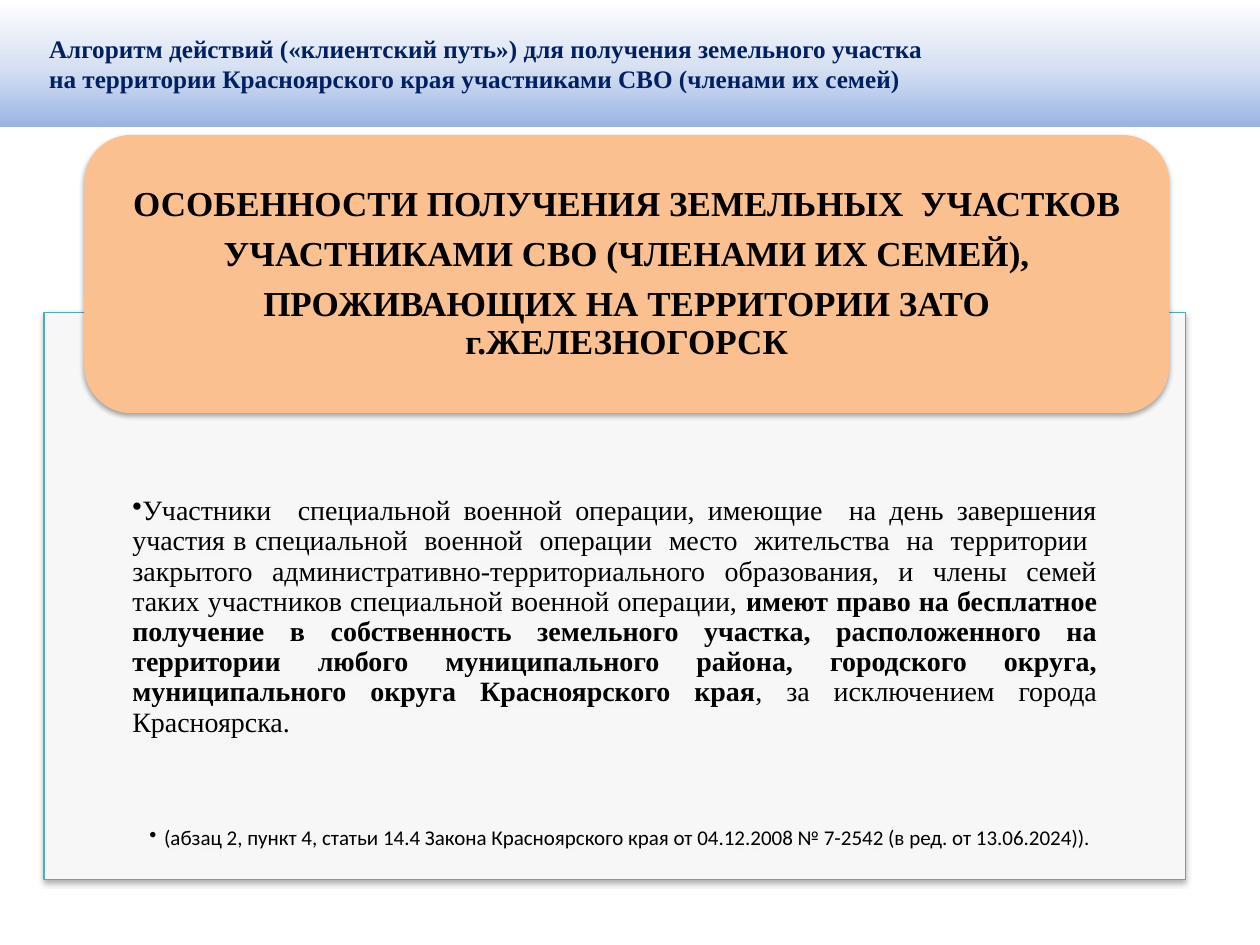
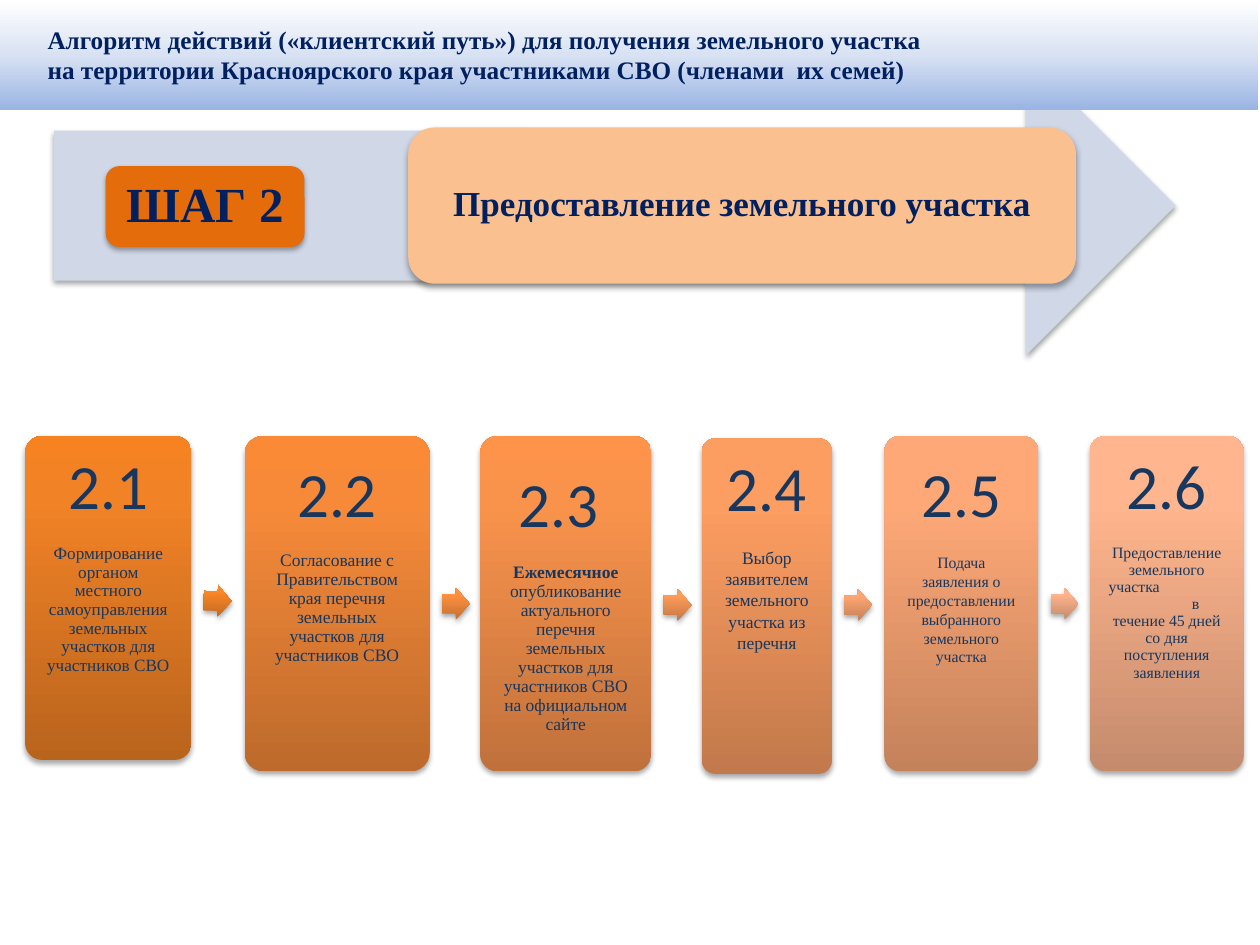
import copy
import dataclasses
import math

import pptx
import pptx.dml.color
import pptx.enum.shapes
import pptx.enum.text
import pptx.oxml.ns
import pptx.util
from lxml import etree

Cm = pptx.util.Cm
Pt = pptx.util.Pt
Shapes = pptx.enum.shapes.MSO_SHAPE
Align = pptx.enum.text.PP_ALIGN
Anchor = pptx.enum.text.MSO_ANCHOR
qn = pptx.oxml.ns.qn


@dataclasses.dataclass(frozen=True)
class Theme:
    serif: str = "Times New Roman"
    sans: str = "Calibri"
    navy: str = "002060"
    number_blue: str = "17375E"
    black: str = "000000"
    white: str = "FFFFFF"
    peach: str = "FAC090"
    orange: str = "E46C0A"
    pale_blue: str = "D0D8E8"
    teal: str = "4BACC6"
    title_size: float = 14.4
    heading_size: float = 20
    step_size: float = 28
    number_size: float = 36
    body_size: float = 16
    source_size: float = 12
    tight: float = 0.9
    gap_ratio: float = 0.35
    band: tuple = ((0, "9AB5E4"), (0.5, "D9E2F3"), (1, "FFFFFF"))
    cards: tuple = (
        ("B9641D", "F18226", "F68222"),
        ("BD6A2C", "F68A39", "FA8A35"),
        ("C0713B", "F9934C", "FE9349"),
        ("C2794B", "FC9D61", "FF9E60"),
        ("C4825B", "FEA877", "FFA977"),
        ("C48B6D", "FFB58D", "FFB68F"),
    )
    arrows: tuple = (
        ("C3691F", "FD8828", "FF8928"),
        ("C47032", "FF9140", "FF9241"),
        ("C57845", "FF9C59", "FF9C5B"),
        ("C58158", "FFA773", "FFA875"),
        ("C48B6C", "FFB48D", "FFB58E"),
    )


THEME = Theme()


def color(value):
    return pptx.dml.color.RGBColor.from_string(value)


def set_all(target, values):
    for name, value in values.items():
        setattr(target, name, value)


def glossy(colors):
    return tuple(zip((0, 0.8, 1), colors))


def line(*runs, **layout):
    """Describe a paragraph: runs are (text, font values); layout holds its format."""
    return runs, layout


def font(size, hue, name=THEME.serif, bold=False):
    return {"size": size, "hue": hue, "name": name, "bold": bold}


def centered(text, style, spacing=THEME.tight, after=None):
    if after is None:
        after = THEME.gap_ratio * style["size"]
    return line((text, style), alignment=Align.CENTER,
                line_spacing=spacing, space_after=Pt(after))


class Deck:
    """Hold the presentation, its theme and the slide being built."""

    def __init__(self, theme):
        self.theme = theme
        self.presentation = pptx.Presentation()
        set_all(self.presentation, {"slide_width": Cm(25.4), "slide_height": Cm(19.05)})
        self.slide = None

    def new_slide(self):
        self.slide = self.presentation.slides.add_slide(self.presentation.slide_layouts[6])

    def shape(self, kind, box, fill, shadow=True, adjustments=()):
        """Add a preset shape; fill is one colour or a series of gradient stops."""
        shape = self.slide.shapes.add_shape(kind, *(Cm(length) for length in box))
        for index, value in enumerate(adjustments):
            shape.adjustments[index] = value
        if isinstance(fill, str):
            shape.fill.solid()
            shape.fill.fore_color.rgb = color(fill)
        else:
            self.gradient(shape, fill)
        shape.line.fill.background()
        shape.shadow.inherit = False
        if shadow:
            self.drop_shadow(shape)
        return shape

    def gradient(self, shape, stops):
        """Fill from the bottom edge up with three stops."""
        shape.fill.gradient()
        shape.fill.gradient_angle = 90
        stop_list = shape.element.find(".//" + qn("a:gsLst"))
        stop_list.insert(1, copy.deepcopy(stop_list[0]))
        for stop, (position, hue) in zip(shape.fill.gradient_stops, stops):
            stop.color.rgb = color(hue)
            stop.position = position

    def drop_shadow(self, shape):
        effects = shape.element.spPr.find(qn("a:effectLst"))
        shadow = etree.SubElement(
            effects, qn("a:outerShdw"), blurRad=str(Pt(3.1)), dist=str(Pt(1.8)),
            dir="5400000", rotWithShape="0")
        hue = etree.SubElement(shadow, qn("a:srgbClr"), val=self.theme.black)
        etree.SubElement(hue, qn("a:alpha"), val="35000")

    def fill_text(self, shape, paragraphs, insets, anchor=Anchor.MIDDLE):
        frame = shape.text_frame
        sides = ("margin_left", "margin_top", "margin_right", "margin_bottom")
        set_all(frame, dict(zip(sides, map(Cm, insets))))
        set_all(frame, {"word_wrap": True, "vertical_anchor": anchor})
        for index, (runs, layout) in enumerate(paragraphs):
            paragraph = frame.add_paragraph() if index else frame.paragraphs[0]
            self.fill_paragraph(paragraph, runs, dict(layout))

    def fill_paragraph(self, paragraph, runs, layout):
        margin, indent = layout.pop("margin", 0), layout.pop("indent", 0)
        bullet = layout.pop("bullet", None)
        set_all(paragraph, {"alignment": Align.LEFT, **layout})
        properties = paragraph._p.get_or_add_pPr()
        properties.set("marL", str(Cm(margin)))
        properties.set("indent", str(Cm(indent)))
        if bullet:
            etree.SubElement(properties, qn("a:buChar"), char=bullet)
        for text, style in runs:
            for index, part in enumerate(text.split("\n")):
                if index:
                    paragraph.add_line_break()
                run = paragraph.add_run()
                run.text = part
                set_all(run.font, {"name": style["name"], "size": Pt(style["size"]),
                                   "bold": style["bold"]})
                run.font.color.rgb = color(style["hue"])

    def rounded(self, box, fill, paragraphs, insets, radius=0.17, anchor=Anchor.MIDDLE):
        """Add a rounded box whose insets count from its outer edges."""
        shape = self.shape(Shapes.ROUNDED_RECTANGLE, box, fill, adjustments=(radius,))
        corner = (1 - math.sqrt(0.5)) * radius * min(box[2:])
        self.fill_text(shape, paragraphs, [max(0, inset - corner) for inset in insets], anchor)

    def title_band(self, text, height, left=0):
        theme = self.theme
        band = self.shape(Shapes.RECTANGLE, (left, 0, 25.4, height), theme.band, shadow=False)
        style = font(theme.title_size, theme.navy, bold=True)
        self.fill_text(band, [line((text, style), margin=0.74)], (0.25, 0.13, 0.25, 0.13))

    def panel(self, box, paragraphs, insets):
        """Add the outlined, slightly see-through text panel."""
        panel = self.shape(Shapes.RECTANGLE, box, self.theme.white)
        hue = panel.element.spPr.find(qn("a:solidFill"))[0]
        etree.SubElement(hue, qn("a:alpha"), val="90000")
        panel.line.color.rgb = color(self.theme.teal)
        panel.line.width = Pt(0.75)
        self.fill_text(panel, paragraphs, insets, Anchor.TOP)

    def card(self, box, colors, paragraphs, anchor):
        self.rounded(box, glossy(colors), paragraphs, (0.38,) * 4, 0.1, anchor)

    def link(self, box, following, colors):
        """Add the small arrow from one card to the following one."""
        (x, y, width, height), (x2, y2, width2, height2) = box, following
        rise = (y2 + height2 / 2) - (y + height / 2)
        run = (x2 + width2 / 2) - (x + width / 2)
        top = y + height / 2 + rise / 2 - 0.32
        arrow = self.shape(Shapes.RIGHT_ARROW, (x + width + 0.25, top, 0.56, 0.64),
                           glossy(colors), adjustments=(0.6, 0.5))
        arrow.rotation = math.degrees(math.atan2(rise, run))


def build_rights_slide(deck):
    theme = deck.theme
    body = font(theme.body_size, theme.black)
    strong = {**body, "bold": True}
    heading = font(theme.heading_size, theme.black, bold=True)
    deck.new_slide()
    deck.panel((0.89, 6.3, 23.01, 11.43), [
        line(("Участники  специальной военной операции, имеющие  на день завершения участия "
              "в специальной  военной  операции  место  жительства  на  территории  закрытого "
              "административно-территориального образования, и члены семей таких участников "
              "специальной военной операции, ", body),
             ("имеют право на бесплатное получение в собственность земельного участка, "
              "расположенного на территории любого муниципального района, городского округа, "
              "муниципального округа Красноярского края", strong),
             (", за исключением города Красноярска.", body),
             alignment=Align.JUSTIFY, line_spacing=theme.tight, space_after=Pt(51),
             indent=-0.48, bullet="•"),
        line(("(абзац 2, пункт 4, статьи 14.4 Закона Красноярского края от 04.12.2008 "
              "№ 7-2542 (в ред. от 13.06.2024)).",
              font(theme.source_size, theme.black, theme.sans)),
             line_spacing=theme.tight, margin=0.64, indent=-0.3, bullet="•"),
    ], (1.78, 3.71, 1.78, 0.3))
    deck.rounded((1.7, 2.72, 21.87, 5.61), theme.peach, [
        centered(text, heading) for text in (
            "ОСОБЕННОСТИ ПОЛУЧЕНИЯ ЗЕМЕЛЬНЫХ  УЧАСТКОВ",
            "УЧАСТНИКАМИ СВО (ЧЛЕНАМИ ИХ СЕМЕЙ),",
            "ПРОЖИВАЮЩИХ НА ТЕРРИТОРИИ ЗАТО г.ЖЕЛЕЗНОГОРСК")
    ], (0.61, 0, 0.61, 0))
    deck.title_band("Алгоритм действий («клиентский путь») для получения земельного участка \n"
                    "на территории Красноярского края участниками СВО (членами их семей)", 2.57)


def build_step_slide(deck):
    theme = deck.theme
    deck.new_slide()
    deck.shape(Shapes.RIGHT_ARROW, (1.09, 1.12, 22.61, 6.05), theme.pale_blue)
    deck.rounded((2.13, 3.35, 4.01, 1.63), theme.orange, [
        centered("ШАГ 2", font(theme.step_size, theme.navy, bold=True))], (0.3,) * 4)
    deck.rounded((8.23, 2.57, 13.46, 3.15), theme.peach, [
        centered("Предоставление земельного участка",
                 font(theme.heading_size, theme.navy, bold=True))], (0.2,) * 4)
    deck.title_band("Алгоритм действий («клиентский путь») для получения земельного участка \n"
                    "на территории Красноярского края участниками СВО (членами  их семей)",
                    2.21, -0.03)

    number = font(theme.number_size, theme.number_blue, theme.sans)
    first, regular, small = (font(size, theme.number_blue) for size in (9.8, 10, 9))
    cards = [
        ((0.51, 8.79, 3.35, 6.53), Anchor.TOP, [
            centered("2.1", number),
            centered("Формирование органом местного самоуправления земельных участков "
                     "для участников СВО", first)]),
        ((4.93, 8.79, 3.73, 6.76), Anchor.TOP, [
            centered("2.2", number, 1, after=12),
            centered("Согласование с Правительством края перечня земельных участков "
                     "для участников СВО", regular)]),
        ((9.68, 8.79, 3.45, 6.76), Anchor.MIDDLE, [
            centered("2.3 ", number),
            line(("Ежемесячное", {**regular, "bold": True}),
                 (" опубликование актуального перечня земельных участков для участников "
                  "СВО на официальном сайте", regular),
                 alignment=Align.CENTER, line_spacing=theme.tight)]),
        ((14.15, 8.84, 2.62, 6.76), Anchor.TOP, [
            centered("2.4", number),
            centered("Выбор заявителем земельного участка из перечня", regular, 1)]),
        ((17.83, 8.79, 3.1, 6.76), Anchor.TOP, [
            centered("2.5", number, 1),
            centered("Подача заявления о предоставлении выбранного земельного участка",
                     small, 1)]),
        ((21.97, 8.79, 3.1, 6.76), Anchor.TOP, [
            centered("2.6", number),
            centered("Предоставление земельного", small, after=0),
            line(("участка", small), line_spacing=theme.tight),
            line(("в", small), alignment=Align.CENTER, line_spacing=theme.tight, margin=1.17),
            centered("течение 45 дней со дня поступления заявления", small)]),
    ]
    for (box, anchor, paragraphs), colors in zip(cards, theme.cards):
        deck.card(box, colors, paragraphs, anchor)
    for current, following, colors in zip(cards, cards[1:], theme.arrows):
        deck.link(current[0], following[0], colors)


def main():
    deck = Deck(THEME)
    build_rights_slide(deck)
    build_step_slide(deck)
    deck.presentation.save("out.pptx")


if __name__ == "__main__":
    main()
